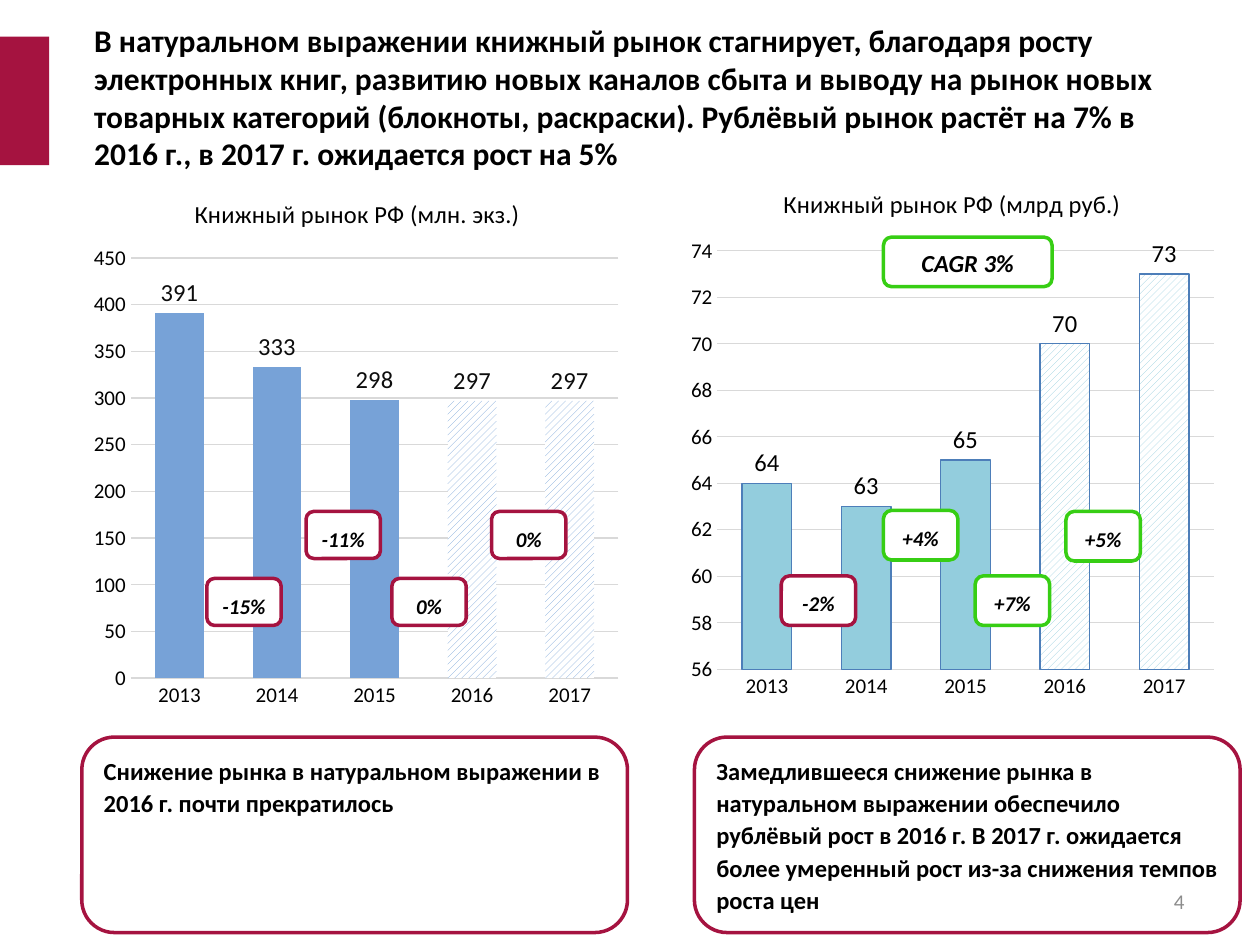
from lxml import etree
from pptx import Presentation
from pptx import util as u
from pptx.chart.data import CategoryChartData
from pptx.dml.color import RGBColor
from pptx.enum import chart as ch, dml, shapes, text
from pptx.oxml import ns

THEME = dict(font="Calibri", black="000000", white="FFFFFF", crimson="A51340",
             green="37CE14", grid="D9D9D9", grey="8C8C8C", label="0D0D0D",
             blue="77A2D7", aqua="93CDDD", outline="4D7EB9",
             title=18, body=14, small=12)

TITLE = ("В натуральном выражении книжный рынок стагнирует, благодаря росту электронных книг, "
         "развитию новых каналов сбыта и выводу на рынок новых товарных категорий (блокноты, "
         "раскраски). Рублёвый рынок растёт на 7% в 2016 г., в 2017 г. ожидается рост на 5%")
YEARS = ["2013", "2014", "2015", "2016", "2017"]
FORECAST_FROM = 3
CHART_SIZE = 11

# plot: inner plot area as fractions of the chart (x, y, w, h)
CHARTS = [
    dict(title="Книжный рынок РФ (млн. экз.)", at=(1.7, 3.53), values=[391, 333, 298, 297, 297],
         scale=(0, 450, 50), color="blue", line=None, label="label", fmt="0",
         plot=(0.085, 0.152, 0.894, 0.77)),
    dict(title="Книжный рынок РФ (млрд руб.)", at=(13.69, 3.33), values=[64, 63, 65, 70, 73],
         scale=(56, 74, 2), color="aqua", line="outline", label="black", fmt="#,##0",
         plot=(0.07, 0.157, 0.91, 0.767)),
]

# text, left, top, width, height, line colour, type size
BADGES = [
    ("-15%", 4.17, 11.66, 1.5, 0.95, "crimson", "small"),
    ("-11%", 6.17, 10.31, 1.5, 0.95, "crimson", "small"),
    ("0%", 7.9, 11.66, 1.5, 0.95, "crimson", "small"),
    ("0%", 9.91, 10.31, 1.5, 0.95, "crimson", "small"),
    ("-2%", 15.75, 11.61, 1.5, 1, "crimson", "small"),
    ("+4%", 17.81, 10.29, 1.5, 1, "green", "small"),
    ("+7%", 19.66, 11.61, 1.5, 1, "green", "small"),
    ("+5%", 21.49, 10.31, 1.5, 1, "green", "small"),
    ("CAGR 3%", 17.81, 4.78, 3.4, 1, "green", "body"),
]
COMMENTS = [
    (1.65, "Снижение рынка в натуральном выражении в 2016 г. почти прекратилось"),
    (14, "Замедлившееся снижение рынка в натуральном выражении обеспечило рублёвый рост "
         "в 2016 г. В 2017 г. ожидается более умеренный рост из-за снижения темпов роста цен"),
]


def rgb(name):
    return RGBColor.from_string(THEME[name])


def style(font, size, color="black", bold=False, italic=False):
    font.name, font.size = THEME["font"], u.Pt(THEME[size])
    font.color.rgb = rgb(color)
    font.bold, font.italic = bold, italic


def write(sp, words, size, color="black", align=text.PP_ALIGN.LEFT,
          anchor=text.MSO_ANCHOR.TOP, spacing=None, bold=True, italic=False):
    tf = sp.text_frame
    tf.text, tf.word_wrap, tf.vertical_anchor = words, True, anchor
    p = tf.paragraphs[0]
    p.alignment, p.line_spacing = align, spacing
    style(p.runs[0].font, size, color, bold, italic)
    return tf


def add_box(s, kind, at, fill=None, line=None):
    sp = s.shapes.add_shape(kind, *map(u.Cm, at))
    sp.shadow.inherit = False
    for target, color in ((sp.fill, fill), (sp.line.fill, line)):
        if color:
            target.solid()
            target.fore_color.rgb = rgb(color)
        else:
            target.background()
    if line:
        sp.line.width = u.Pt(2)
    return sp


def set_line(line, color):
    if color:
        line.color.rgb = rgb(color)
        line.width = u.Pt(0.75)
    else:
        line.fill.background()


def fix_plot_area(chart, fractions):
    """Pin the inner plot area, which needs a manual layout in XML."""
    plot_area = chart.plots[0]._element.getparent()
    for old in plot_area.findall(ns.qn("c:layout")):
        plot_area.remove(old)
    layout = etree.Element(ns.qn("c:layout"))
    manual = etree.SubElement(layout, ns.qn("c:manualLayout"))
    settings = [("layoutTarget", "inner"), ("xMode", "edge"), ("yMode", "edge"),
                *zip("xywh", fractions)]
    for tag, value in settings:
        etree.SubElement(manual, ns.qn("c:" + tag)).set("val", str(value))
    plot_area.insert(0, layout)


def add_market_chart(s, c):
    data = CategoryChartData()
    data.categories = YEARS
    data.add_series(c["title"], c["values"])
    chart = s.shapes.add_chart(ch.XL_CHART_TYPE.COLUMN_CLUSTERED, *map(u.Cm, c["at"]),
                               u.Cm(CHART_SIZE), u.Cm(CHART_SIZE), data).chart
    chart.has_legend = False
    style(chart.font, "small")
    chart.has_title = True
    tf = chart.chart_title.text_frame
    tf.text = c["title"]
    style(tf.paragraphs[0].runs[0].font, "body")
    chart.chart_title.include_in_layout = False

    for axis, line in ((chart.category_axis, "grid"), (chart.value_axis, None)):
        axis.major_tick_mark = axis.minor_tick_mark = ch.XL_TICK_MARK.NONE
        style(axis.tick_labels.font, "small")
        set_line(axis.format.line, line)
    axis = chart.value_axis
    axis.minimum_scale, axis.maximum_scale, axis.major_unit = c["scale"]
    axis.tick_labels.number_format = c["fmt"]
    axis.tick_labels.number_format_is_linked = False
    set_line(axis.major_gridlines.format.line, "grid")

    plot = chart.plots[0]
    plot.gap_width, plot.overlap, plot.vary_by_categories = 100, -24, False
    plot.has_data_labels = True
    labels = plot.data_labels
    labels.show_value, labels.position = True, ch.XL_LABEL_POSITION.OUTSIDE_END
    labels.number_format, labels.number_format_is_linked = c["fmt"], False
    style(labels.font, "body", c["label"])

    series = plot.series[0]
    series.invert_if_negative = False
    for i in range(len(YEARS)):
        fmt = series.points[i].format
        if i >= FORECAST_FROM:
            fmt.fill.patterned()
            fmt.fill.pattern = dml.MSO_PATTERN.WIDE_UPWARD_DIAGONAL
            fmt.fill.back_color.rgb = rgb("white")
        else:
            fmt.fill.solid()
        fmt.fill.fore_color.rgb = rgb(c["color"])
        set_line(fmt.line, c["line"])
    fix_plot_area(chart, c["plot"])


def main():
    prs = Presentation()
    prs.slide_width, prs.slide_height = u.Cm(25.4), u.Cm(19.05)
    s = prs.slides.add_slide(prs.slide_layouts[6])
    rect, rounded = shapes.MSO_SHAPE.RECTANGLE, shapes.MSO_SHAPE.ROUNDED_RECTANGLE
    middle = text.MSO_ANCHOR.MIDDLE

    add_box(s, rect, (0, 0.74, 0.99, 2.59), fill="crimson")
    heading = s.shapes.add_textbox(*map(u.Cm, (1.65, 0.36, 22.86, 3.18)))
    write(heading, TITLE, "title", anchor=middle)

    for c in CHARTS:
        add_market_chart(s, c)

    for words, *at, line, size in BADGES:
        sp = add_box(s, rounded, at, "white", line)
        tf = write(sp, words, size, align=text.PP_ALIGN.CENTER, spacing=u.Pt(18), italic=True)
        tf.margin_left = tf.margin_right = 0

    for left, words in COMMENTS:
        sp = add_box(s, rounded, (left, 14.86, 11, 3.94), line="crimson")
        write(sp, words, "body", spacing=1.1)

    number = s.shapes.add_textbox(*map(u.Cm, (18.21, 17.65, 5.92, 1.02)))
    write(number, "4", "small", "grey", text.PP_ALIGN.RIGHT, middle, bold=False)
    prs.save("out.pptx")


if __name__ == "__main__":
    main()
